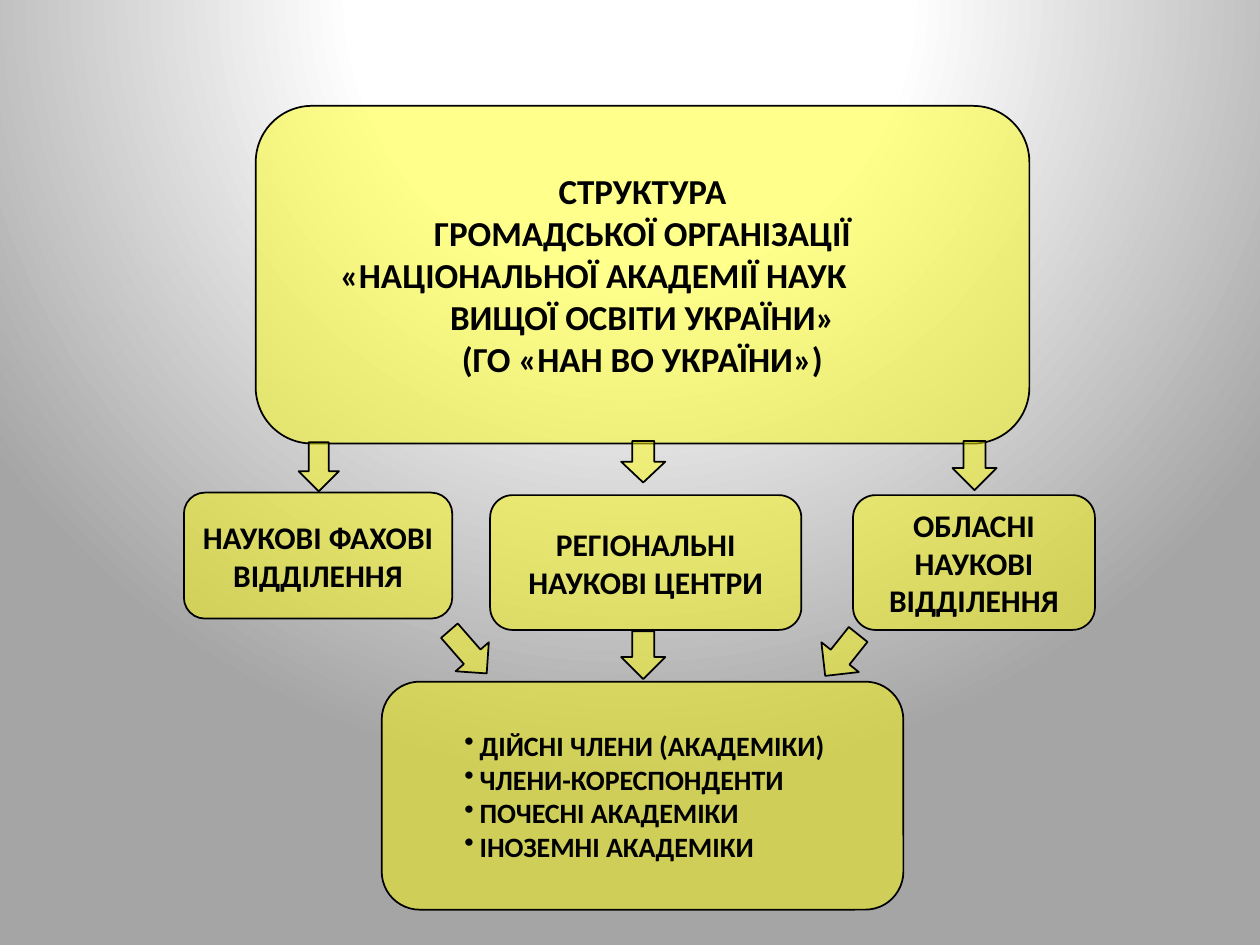
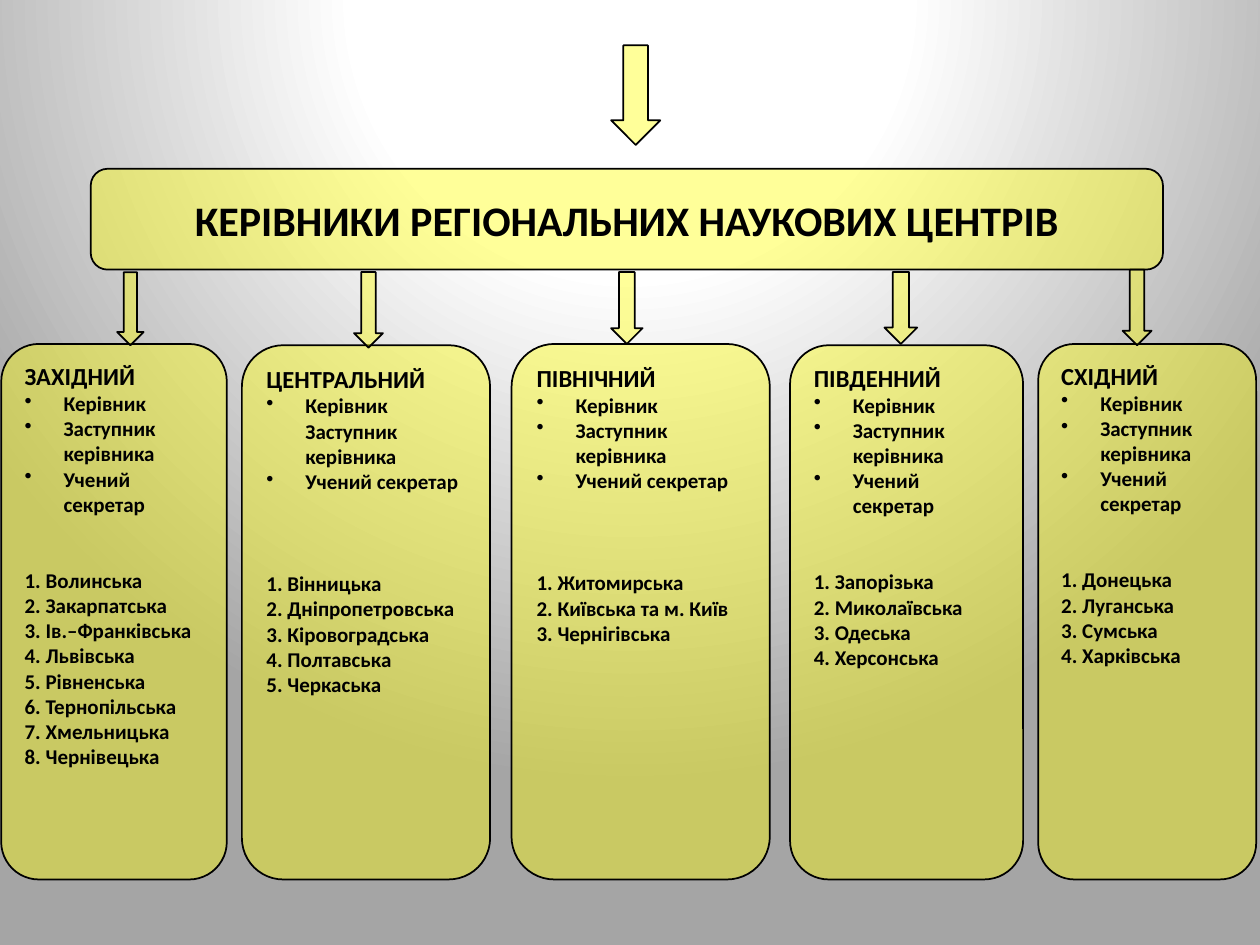
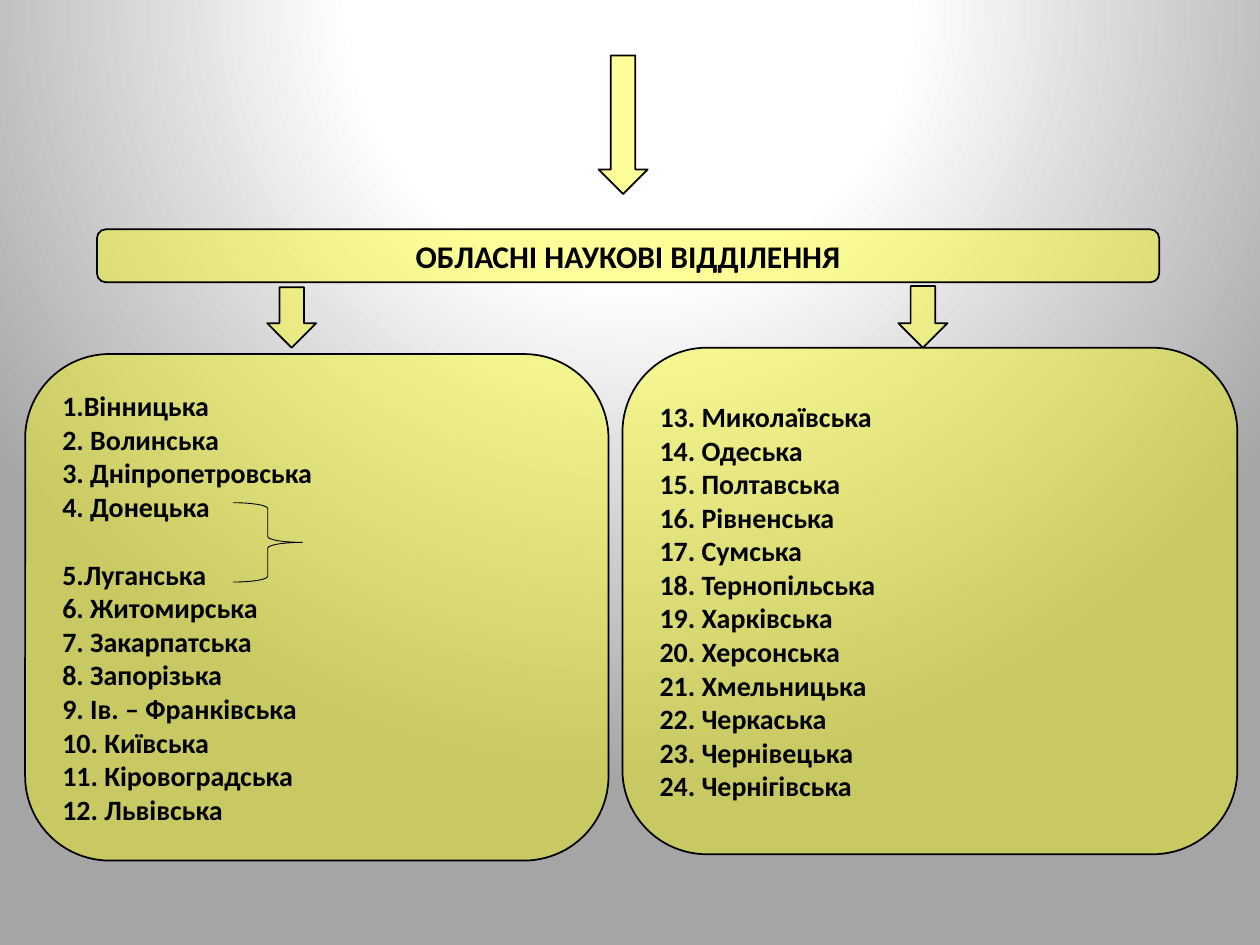
from lxml import etree
from pptx import Presentation
from pptx.dml.color import RGBColor
from pptx.enum.shapes import MSO_SHAPE
from pptx.enum.text import MSO_ANCHOR, PP_ALIGN
from pptx.oxml.ns import qn
from pptx.util import Inches, Pt

ROUND = MSO_SHAPE.ROUNDED_RECTANGLE
DOWN = MSO_SHAPE.DOWN_ARROW
BRACE = MSO_SHAPE.RIGHT_BRACE
TOP, MIDDLE = MSO_ANCHOR.TOP, MSO_ANCHOR.MIDDLE
LEFT, CENTER = PP_ALIGN.LEFT, PP_ALIGN.CENTER

COLORS = {"box": "FFFF00", "ink": "000000", "light": "FFFFFF", "dark": "A5A5A5"}
FONT = "Calibri"
STOPS = [(0, "light"), (35, "light"), (100, "dark")]

# Regional centres: left, top, width, name, posts, gap before list, regions
POSTS = ["Керівник", "Заступник керівника", "Учений секретар"]
CENTERS = [
    (0.01, 2.73, 1.79, "ЗАХІДНИЙ", POSTS, 29,
     ["Волинська", "Закарпатська", "Ів.–Франківська", "Львівська",
      "Рівненська", "Тернопільська", "Хмельницька", "Чернівецька"]),
    (1.92, 2.74, 1.97, "ЦЕНТРАЛЬНИЙ",
     ["Керівник Заступник керівника", "Учений секретар"], 44,
     ["Вінницька", "Дніпропетровська", "Кіровоградська", "Полтавська",
      "Черкаська"]),
    (4.06, 2.73, 2.05, "ПІВНІЧНИЙ", POSTS, 44,
     ["Житомирська", "Київська та м. Київ", "Чернігівська"]),
    (6.27, 2.74, 1.85, "ПІВДЕННИЙ", POSTS, 29,
     ["Запорізька", "Миколаївська", "Одеська", "Херсонська"]),
    (8.24, 2.73, 1.73, "СХІДНИЙ", POSTS, 29,
     ["Донецька", "Луганська", "Сумська", "Харківська"]),
]

# Regional branches in two panels
WEST = ["1.Вінницька", "2. Волинська", "3. Дніпропетровська", "4. Донецька",
        "5.Луганська", "6. Житомирська", "7. Закарпатська", "8. Запорізька",
        "9. Ів. – Франківська", "10. Київська", "11. Кіровоградська",
        "12. Львівська"]
EAST = ["Миколаївська", "Одеська", "Полтавська", "Рівненська", "Сумська",
        "Тернопільська", "Харківська", "Херсонська", "Хмельницька",
        "Черкаська", "Чернівецька", "Чернігівська"]


def color(name):
    return RGBColor.from_string(COLORS[name])


def set_back(master):
    """Give every slide the round light-to-dark gradient."""
    master.background.fill.gradient()
    grad = master.element.find(".//" + qn("a:gradFill"))
    for child in list(grad):
        grad.remove(child)
    stops = etree.SubElement(grad, qn("a:gsLst"))
    for place, name in STOPS:
        stop = etree.SubElement(stops, qn("a:gs"), pos=str(place * 1000))
        etree.SubElement(stop, qn("a:srgbClr"), val=COLORS[name])
    route = etree.SubElement(grad, qn("a:path"), path="circle")
    etree.SubElement(route, qn("a:fillToRect"),
                     l="50000", t="-80000", r="50000", b="180000")


def add_form(slide, kind, at, alpha=None, width=1):
    """Add an outlined shape, filled with clear yellow when alpha is given."""
    form = slide.shapes.add_shape(kind, *map(Inches, at))
    form.shadow.inherit = False
    form.line.color.rgb = color("ink")
    form.line.width = Pt(width)
    if alpha is None:
        form.fill.background()
    else:
        form.fill.solid()
        form.fill.fore_color.rgb = color("box")
        tint = form.element.spPr.find(qn("a:solidFill"))[0]
        etree.SubElement(tint, qn("a:alpha"), val=str(alpha * 1000))
    return form


def add_arrow(slide, at, alpha=40, turn=0):
    add_form(slide, DOWN, at, alpha).rotation = turn


def add_line(frame, text, size, align=LEFT):
    """Add a bold paragraph, using the empty first one if there is one."""
    para = frame.paragraphs[0]
    if para.runs:
        para = frame.add_paragraph()
    para.text = text
    para.alignment = align
    para.font.name = FONT
    para.font.size = Pt(size)
    para.font.bold = True
    para.font.color.rgb = color("ink")
    return para


def indent(para, left, first=0, bullet=False):
    props = para._p.get_or_add_pPr()
    props.set("marL", str(Inches(left)))
    props.set("indent", str(Inches(first)))
    if bullet:
        mark = etree.Element(qn("a:buChar"), char="•")
        props.find(qn("a:defRPr")).addprevious(mark)


def add_box(slide, at, lines, size, alpha=40, align=CENTER, anchor=MIDDLE):
    """Add a rounded box with one paragraph per line."""
    box = add_form(slide, ROUND, at, alpha)
    frame = box.text_frame
    frame.word_wrap = True
    frame.vertical_anchor = anchor
    return [add_line(frame, text, size, align) for text in lines], frame


def add_center(slide, left, top, width, name, posts, gap, regions):
    at = (left, top, width, 6.98 - top)
    _, frame = add_box(slide, at, [name], 14, align=LEFT, anchor=TOP)
    for post in posts:
        indent(add_line(frame, post, 12), 0.31, -0.31, True)
    for num, region in enumerate(regions, 1):
        para = add_line(frame, f"{num}. {region}", 12)
        if num == 1:
            para.space_before = Pt(gap)


def build_tree(slide):
    # Heading
    title, _ = add_box(slide, (2.03, 0.84, 6.14, 2.68), [
        "СТРУКТУРА", "ГРОМАДСЬКОЇ ОРГАНІЗАЦІЇ",
        "«НАЦІОНАЛЬНОЇ АКАДЕМІЇ НАУК", "ВИЩОЇ ОСВІТИ УКРАЇНИ»",
        "(ГО «НАН ВО УКРАЇНИ»)"], 20, 45)
    title[2].alignment = LEFT
    indent(title[2], 0.44)

    # Units
    for at, text in [
            ((6.77, 3.93, 1.92, 1.07), "ОБЛАСНІ НАУКОВІ ВІДДІЛЕННЯ"),
            ((3.89, 3.93, 2.47, 1.07), "РЕГІОНАЛЬНІ НАУКОВІ ЦЕНТРИ"),
            ((1.46, 3.91, 2.13, 1), "НАУКОВІ ФАХОВІ ВІДДІЛЕННЯ")]:
        add_box(slide, at, [text], 18, 46)

    # Members
    members, _ = add_box(slide, (3.03, 5.41, 4.14, 1.81), [
        "ДІЙСНІ ЧЛЕНИ (АКАДЕМІКИ)", "ЧЛЕНИ-КОРЕСПОНДЕНТИ",
        "ПОЧЕСНІ АКАДЕМІКИ", "ІНОЗЕМНІ АКАДЕМІКИ"], 16, 46, LEFT)
    for para in members:
        indent(para, 0.59, -0.12, True)

    # Arrows
    for at, turn in [((4.93, 3.5, 0.35, 0.33), 0),
                     ((2.37, 3.51, 0.32, 0.39), 0),
                     ((7.56, 3.5, 0.35, 0.39), 0),
                     ((4.93, 5.01, 0.35, 0.38), 0),
                     ((3.54, 4.95, 0.35, 0.45), 318.9),
                     ((6.49, 4.99, 0.38, 0.42), 38.5)]:
        add_arrow(slide, at, 46, turn)


def build_centers(slide):
    for center in CENTERS:
        add_center(slide, *center)
    for at in [(0.93, 2.16, 0.21, 0.58), (2.81, 2.16, 0.23, 0.6),
               (4.85, 2.16, 0.25, 0.57), (7.02, 2.16, 0.26, 0.57),
               (8.91, 2.14, 0.23, 0.6), (4.85, 0.36, 0.39, 0.79)]:
        add_arrow(slide, at)
    add_box(slide, (0.72, 1.34, 8.51, 0.8),
            ["КЕРІВНИКИ РЕГІОНАЛЬНИХ НАУКОВИХ ЦЕНТРІВ"], 24)


def build_branches(slide):
    add_box(slide, (0.77, 1.82, 8.43, 0.42),
            ["ОБЛАСНІ НАУКОВІ ВІДДІЛЕННЯ"], 18)
    for at in [(2.12, 2.28, 0.39, 0.48), (7.13, 2.27, 0.39, 0.49),
               (4.75, 0.44, 0.39, 1.1)]:
        add_arrow(slide, at)

    # Panels
    west, _ = add_box(slide, (0.2, 2.81, 4.63, 4.02), WEST, 16, align=LEFT)
    west[4].space_before = Pt(19.5)
    east = [f"{num}. {name}" for num, name in enumerate(EAST, len(WEST) + 1)]
    add_box(slide, (4.94, 2.76, 4.88, 4.02), east, 16, align=LEFT)

    # Brace joining two regions
    add_form(slide, BRACE, (1.85, 3.99, 0.55, 0.63), width=0.5)


def main():
    deck = Presentation()
    deck.slide_width, deck.slide_height = Inches(10), Inches(7.5)
    set_back(deck.slide_master)
    for build in (build_tree, build_centers, build_branches):
        build(deck.slides.add_slide(deck.slide_layouts[6]))
    deck.save("out.pptx")


if __name__ == "__main__":
    main()
